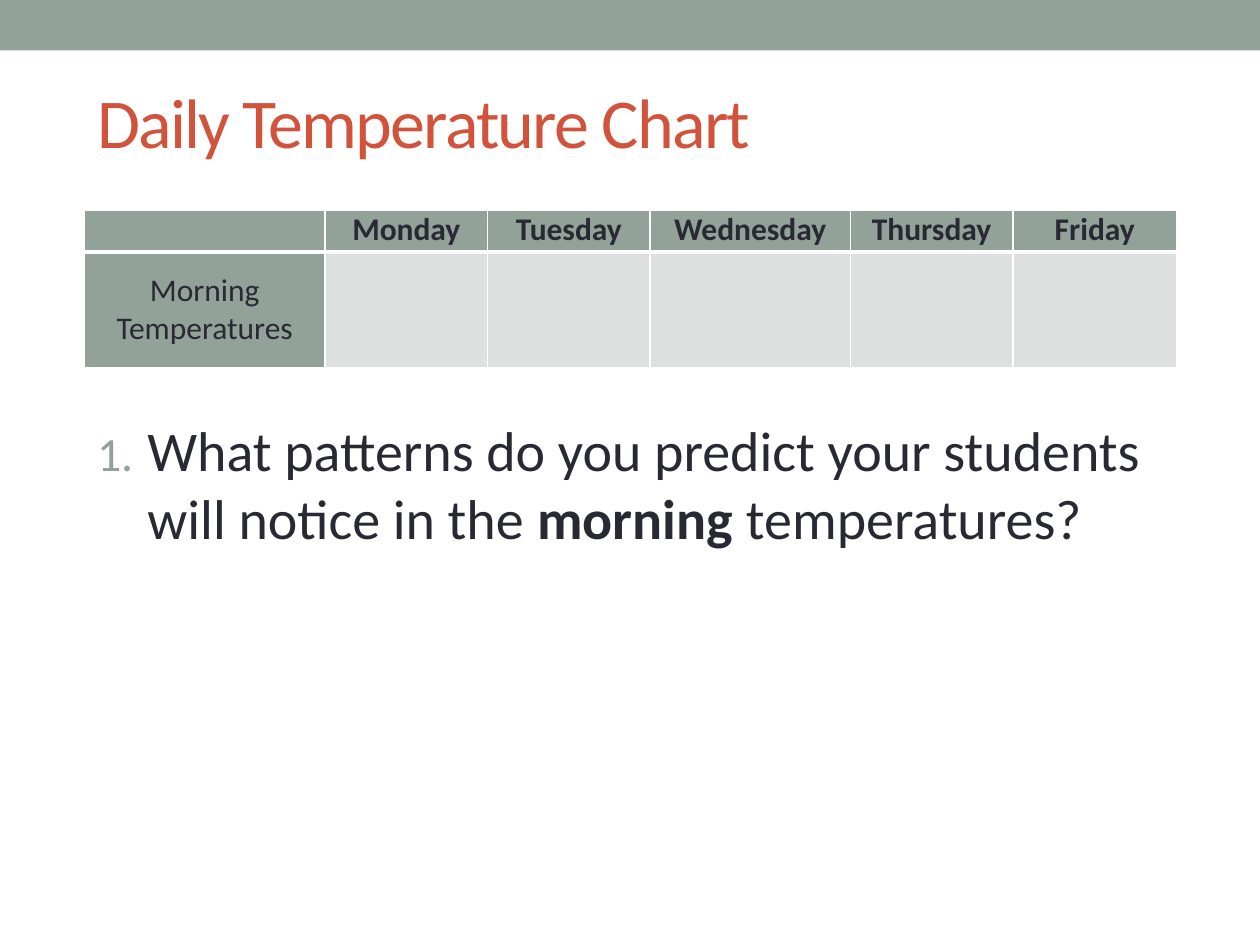
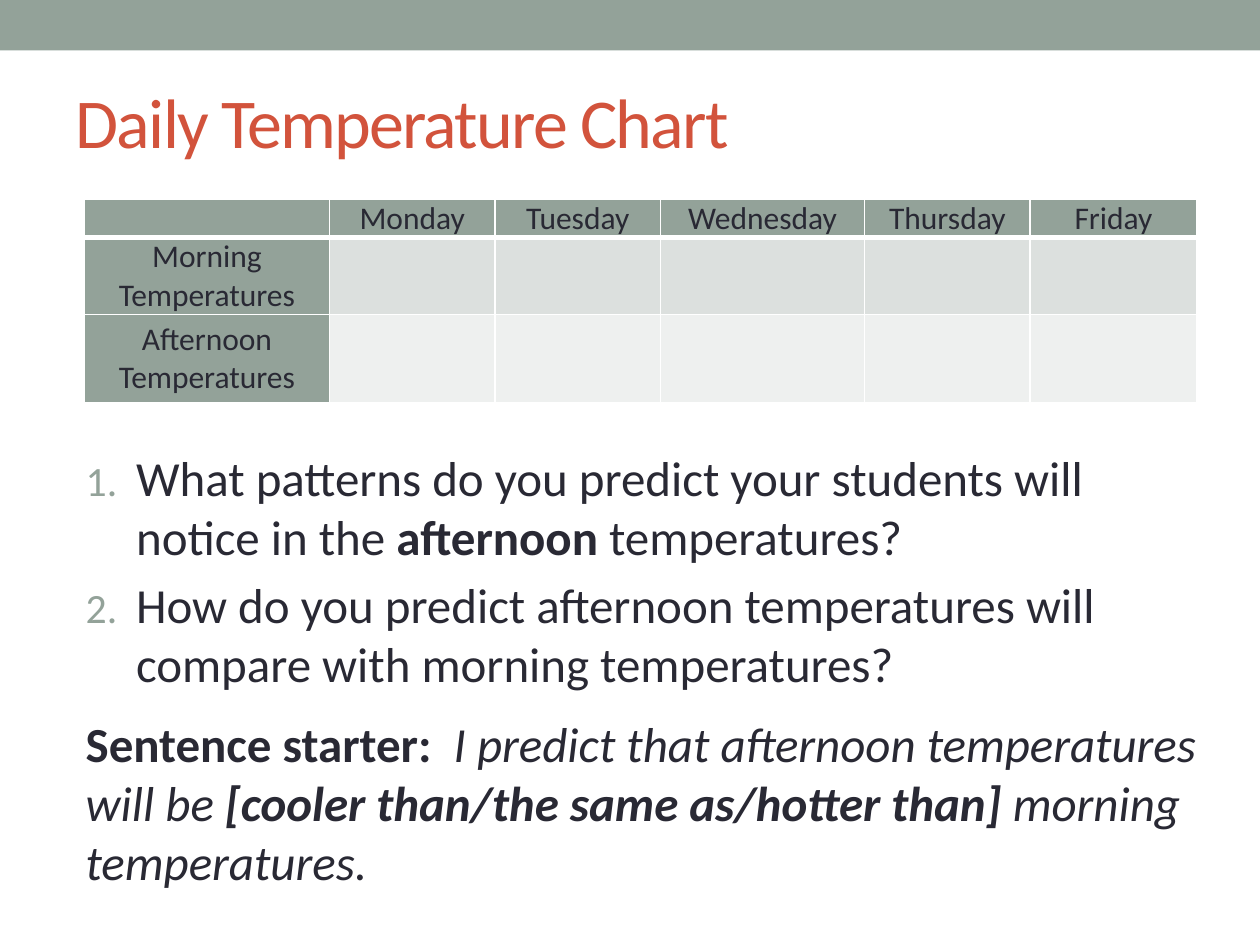
from dataclasses import dataclass

from lxml import etree
from pptx import Presentation
from pptx.dml.color import RGBColor
from pptx.enum.shapes import MSO_SHAPE
from pptx.enum.text import MSO_ANCHOR, MSO_AUTO_SIZE, PP_ALIGN
from pptx.oxml.ns import qn
from pptx.util import Inches, Pt

RECT = MSO_SHAPE.RECTANGLE
TOP, MIDDLE = MSO_ANCHOR.TOP, MSO_ANCHOR.MIDDLE
LEFT, CENTER = PP_ALIGN.LEFT, PP_ALIGN.CENTER
NO_FIT = MSO_AUTO_SIZE.NONE
TITLE_AND_CONTENT = 1


@dataclass(frozen=True)
class Theme:
    font: str = "Calibri"
    sage: str = "93A299"
    red: str = "D2533C"
    ink: str = "292934"
    white: str = "FFFFFF"
    bands: tuple = ("DCE0DE", "EEF0EF")
    title_size: int = 40
    table_size: int = 18


THEME = Theme()
TITLE = "Daily Temperature Chart"
DAYS = ("Monday", "Tuesday", "Wednesday", "Thursday", "Friday")
COLUMN_WEIGHTS = (1.91, 1.29, 1.29, 1.59, 1.29, 1.3)


# Text helpers
def rgb(value):
    return RGBColor.from_string(value)


def style(p, size, color, bold=None):
    p.font.name = THEME.font
    p.font.size = Pt(size)
    p.font.color.rgb = rgb(color)
    p.font.bold = bold


def place(shape, box):
    shape.left, shape.top, shape.width, shape.height = map(Inches, box)


def add_child(parent, tag, **attrs):
    child = etree.SubElement(parent, qn(tag))
    for name, value in attrs.items():
        child.set(name, str(value))
    return child


def set_bullet(p, numbered):
    """Give a paragraph a sage number with a hanging indent, or no bullet."""
    pPr = p._p.get_or_add_pPr()
    indent = Inches(0.4) if numbered else 0
    pPr.set("marL", str(indent))
    pPr.set("indent", str(-indent))
    if numbered:
        add_child(add_child(pPr, "a:buClr"), "a:srgbClr", val=THEME.sage)
        add_child(pPr, "a:buSzPct", val=85000)
        add_child(pPr, "a:buFont", typeface=THEME.font)
        add_child(pPr, "a:buAutoNum", type="arabicPeriod")
    else:
        add_child(pPr, "a:buNone")


# Slide parts
def add_slide(prs, title_box):
    """Add a slide with the top band and the shared title."""
    s = prs.slides.add_slide(prs.slide_layouts[TITLE_AND_CONTENT])
    band = s.shapes.add_shape(RECT, 0, 0, prs.slide_width, Inches(0.4))
    band.shadow.inherit = False
    band.fill.solid()
    band.fill.fore_color.rgb = rgb(THEME.sage)
    band.line.fill.background()

    title = s.shapes.title
    place(title, title_box)
    tf = title.text_frame
    tf.auto_size = NO_FIT
    tf.vertical_anchor = MIDDLE
    p = tf.paragraphs[0]
    p.alignment = LEFT
    style(p, THEME.title_size, THEME.red)
    r = p.add_run()
    r.text = TITLE
    r._r.get_or_add_rPr().set("spc", "-100")
    return s


def add_questions(s, box, size, paragraphs):
    """Fill the body; each paragraph is (numbered, space before, runs)."""
    body = s.placeholders[1]
    place(body, box)
    tf = body.text_frame
    tf.auto_size = NO_FIT
    tf.vertical_anchor = TOP
    for i, (numbered, space_before, runs) in enumerate(paragraphs):
        p = tf.add_paragraph() if i else tf.paragraphs[0]
        if space_before is not None:
            p.space_before = Pt(space_before)
        set_bullet(p, numbered)
        style(p, size, THEME.ink)
        for text, bold, italic in runs:
            r = p.add_run()
            r.text = text
            r.font.bold = bold
            r.font.italic = italic


def set_borders(cell, bottom):
    tcPr = cell._tc.get_or_add_tcPr()
    for side, width in (("L", 1), ("R", 1), ("T", 1), ("B", bottom)):
        ln = add_child(tcPr, f"a:ln{side}", w=Pt(width))
        add_child(add_child(ln, "a:solidFill"), "a:srgbClr", val=THEME.white)


def format_cell(cell, text, fill, anchor, bold, bottom):
    cell.margin_left = cell.margin_right = Inches(0.07)
    cell.margin_top = cell.margin_bottom = 0
    cell.vertical_anchor = anchor
    set_borders(cell, bottom)
    cell.fill.solid()
    cell.fill.fore_color.rgb = rgb(fill)
    cell.text = text
    p = cell.text_frame.paragraphs[0]
    p.alignment = CENTER
    style(p, THEME.table_size, THEME.ink, bold)


def add_temperature_table(s, left, top, width, row_heights, times, bold_days):
    """Add a table of weekdays with one empty row for each time of day."""
    rows = [("", *DAYS)]
    rows += [(f"{time} Temperatures", *[""] * len(DAYS)) for time in times]
    frame = s.shapes.add_table(len(rows), len(COLUMN_WEIGHTS), Inches(left),
                               Inches(top), Inches(width),
                               Inches(sum(row_heights)))
    table = frame.table
    table.first_row = table.horz_banding = False
    for column, weight in zip(table.columns, COLUMN_WEIGHTS):
        column.width = Inches(width * weight / sum(COLUMN_WEIGHTS))
    for row, height in zip(table.rows, row_heights):
        row.height = Inches(height)
    for i, texts in enumerate(rows):
        header = i == 0
        for j, text in enumerate(texts):
            fill = THEME.sage if header or j == 0 else THEME.bands[i - 1]
            format_cell(table.cell(i, j), text, fill,
                        TOP if header else MIDDLE,
                        bold=header and bold_days,
                        bottom=3 if header else 1)


def pattern_question(time):
    return (True, 24, [
        ("What patterns do you predict your students will notice in the ",
         False, False),
        (time, True, False),
        (" temperatures?", False, False),
    ])


def main():
    prs = Presentation()
    prs.slide_width, prs.slide_height = Inches(10), Inches(7.5)

    # Morning temperatures
    s = add_slide(prs, (0.67, 0.42, 8.83, 1.08))
    add_questions(s, (0.67, 3.25, 8.83, 3.83), 32,
                  [pattern_question("morning")])
    add_temperature_table(s, 0.67, 1.67, 8.67, (0.33, 0.92),
                          ("Morning",), bold_days=True)

    # Morning and afternoon temperatures
    s = add_slide(prs, (0.5, 0.42, 9, 1.08))
    add_questions(s, (0.58, 3.5, 9.08, 3.58), 28, [
        pattern_question("afternoon"),
        (True, None, [
            ("How do you predict afternoon temperatures will compare with "
             "morning temperatures?", False, False),
        ]),
        (False, 12, [
            ("Sentence starter:  ", True, False),
            ("I predict that afternoon temperatures will be ", False, True),
            ("[cooler than/the same as/hotter than] ", True, True),
            ("morning temperatures.", False, True),
        ]),
    ])
    add_temperature_table(s, 0.67, 1.58, 8.83, (0.3, 0.6, 0.7),
                          ("Morning", "Afternoon"), bold_days=False)

    prs.save("out.pptx")


if __name__ == "__main__":
    main()
